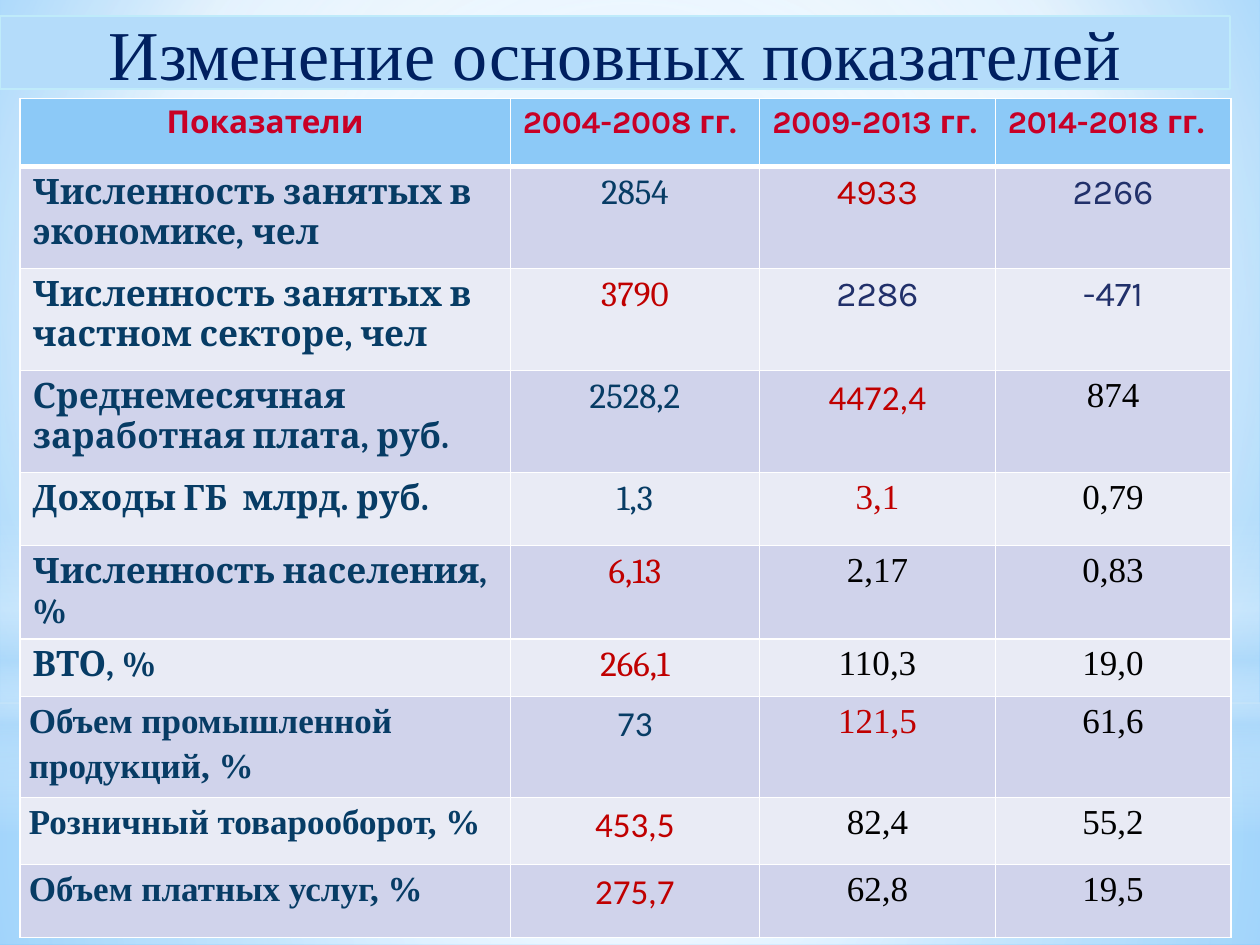
import dataclasses
import pptx
import pptx.dml.color
import pptx.enum.shapes
import pptx.enum.text
import pptx.oxml
import pptx.oxml.ns
import pptx.util

Inches = pptx.util.Inches
Pt = pptx.util.Pt
Shape = pptx.enum.shapes.MSO_SHAPE
Align = pptx.enum.text.PP_ALIGN
Anchor = pptx.enum.text.MSO_ANCHOR


@dataclasses.dataclass(frozen=True)
class Theme:
    white: str = "FFFFFF"
    sky: str = "B4DCFA"
    edge: str = "BFEBFA"
    navy: str = "002060"
    head: str = "8CC9F7"
    bands: tuple = ("D0D3EB", "E9EBF5")
    crimson: str = "C80026"
    peak: str = "C00000"
    steel: str = "073C65"
    indigo: str = "21306A"
    black: str = "000000"
    serif: str = "Times New Roman"
    book: str = "Cambria"
    sans: str = "Calibri"
    round: str = "Karla"
    title: int = 40
    label: int = 18
    body: int = 20


T = Theme()
HEAD = ("Показатели", "2004-2008 гг.", "2009-2013 гг.", "2014-2018 гг.")
DATA = (
    ("Численность занятых в экономике, чел", "2854", "4933", "2266"),
    ("Численность занятых в частном секторе, чел", "3790", "2286", "-471"),
    ("Среднемесячная заработная плата, руб.", "2528,2", "4472,4", "874"),
    ("Доходы ГБ  млрд. руб.", "1,3", "3,1", "0,79"),
    ("Численность населения, %", "6,13", "2,17", "0,83"),
    ("ВТО, %", "266,1", "110,3", "19,0"),
    ("Объем промышленной  продукций, %", "73", "121,5", "61,6"),
    ("Розничный товарооборот, %", "453,5", "82,4", "55,2"),
    ("Объем платных услуг, %", "275,7", "62,8", "19,5"),
)
WIDTHS = (3.89, 1.98, 1.87, 1.87)
HEIGHTS = (0.54, 0.81, 0.81, 0.81, 0.58, 0.46, 0.46, 0.8, 0.53, 0.58)


def color(code):
    return pptx.dml.color.RGBColor.from_string(code)


def xml(text):
    space = pptx.oxml.ns.nsdecls("a")
    return pptx.oxml.parse_xml(text.replace(" ", f" {space} ", 1))


def blend(node, stops, focus=None):
    marks = "".join(
        f'<a:gs pos="{pos * 1000}"><a:srgbClr val="{code}">'
        f'<a:alpha val="{alpha * 1000}"/></a:srgbClr></a:gs>'
        for pos, code, alpha in stops)
    way = '<a:lin ang="5400000" scaled="0"/>'
    if focus:
        sides = " ".join(f'{side}="{part * 1000}"' for side, part in zip("ltrb", focus))
        way = f'<a:path path="circle"><a:fillToRect {sides}/></a:path>'
    old = node.find(pptx.oxml.ns.qn("a:solidFill"))
    node.replace(old, xml(f'<a:gradFill rotWithShape="1"><a:gsLst>{marks}</a:gsLst>{way}</a:gradFill>'))


def style(para, font, size, tint, bold, align):
    para.alignment = align
    for run in para.runs:
        run.font.name = font
        run.font.size = Pt(size)
        run.font.bold = bold
        run.font.color.rgb = color(tint)


def backdrop(slide, left, top, width, height):
    slide.background.fill.solid()
    blend(slide.element.xpath(".//p:bgPr")[0],
          ((0, "9ED5FF", 100), (60, T.white, 100), (100, "5BB9FF", 100)), (20, 10, 20, 60))
    mid = (50, 50, 50, 50)
    layers = (
        (Shape.RECTANGLE, 5.58, 1.92, mid,
         ((0, T.white, 91), (37, T.white, 76), (100, T.sky, 79))),
        (Shape.RECTANGLE, 0, 5.58, mid,
         ((0, T.white, 89), (48, T.white, 62), (100, T.sky, 79))),
        (Shape.RECTANGLE, 4.12, 2.5, None,
         ((0, T.white, 0), (29, T.white, 30), (45, T.sky, 40),
          (55, T.white, 26), (65, T.sky, 60), (100, T.white, 0))),
        (Shape.OVAL, 1.75, 5.58, mid, ((0, T.white, 100), (56, T.white, 0))),
    )
    for kind, down, tall, focus, stops in layers:
        layer = slide.shapes.add_shape(
            kind, left, top + int(height * down / 7.5), width, int(height * tall / 7.5))
        layer.shadow.inherit = False
        layer.line.fill.background()
        layer.fill.solid()
        blend(layer.element.spPr, stops, focus)


def heading(slide, left, top, width, height):
    title = slide.shapes.title
    title.left, title.top, title.width, title.height = left, top, width, height
    title.element.spPr.append(xml('<a:prstGeom prst="roundRect"><a:avLst/></a:prstGeom>'))
    title.fill.solid()
    title.fill.fore_color.rgb = color(T.sky)
    title.line.color.rgb = color(T.edge)
    title.line.width = Pt(1.25)
    frame = title.text_frame
    frame.text = "Изменение основных показателей"
    frame.auto_size = pptx.enum.text.MSO_AUTO_SIZE.NONE
    frame.vertical_anchor = Anchor.MIDDLE
    style(frame.paragraphs[0], T.serif, T.title, T.navy, False, Align.CENTER)
    title.element.getparent().append(title.element)


def border(cell, base):
    props = cell._tc.get_or_add_tcPr()
    for spot, (side, thick) in enumerate((("L", 1), ("R", 1), ("T", 1), ("B", base))):
        props.insert(spot, xml(
            f'<a:ln{side} w="{Pt(thick)}"><a:solidFill><a:srgbClr val="{T.white}"/>'
            f'</a:solidFill></a:ln{side}>'))


def look(row, col, top):
    late = row >= 7
    if col == 0:
        return T.serif if late else T.book, T.steel
    if col == 1:
        font, tint = T.sans if late else T.book, T.steel
    elif row < 3:
        font, tint = T.round, T.indigo
    else:
        font, tint = T.sans if (row, col) == (3, 2) else T.serif, T.black
    return font, T.peak if top else tint


def grid(slide, left, top, width, height):
    table = slide.shapes.add_table(len(HEIGHTS), len(WIDTHS), left, top, width, height).table
    for col, size in zip(table.columns, WIDTHS):
        col.width = Inches(size)
    for row, size in zip(table.rows, HEIGHTS):
        row.height = Inches(size)
    for row, texts in enumerate((HEAD, *DATA)):
        sums = [float(text.replace(",", ".")) for text in texts[1:]] if row else []
        for col, text in enumerate(texts):
            cell = table.cell(row, col)
            cell.text = text
            cell.fill.solid()
            cell.fill.fore_color.rgb = color(T.bands[(row - 1) % 2] if row else T.head)
            border(cell, 1 if row else 3)
            para = cell.text_frame.paragraphs[0]
            if row == 0:
                align = Align.JUSTIFY if col else Align.CENTER
                style(para, T.round, T.label, T.crimson, True, align)
                continue
            best = col > 0 and sums[col - 1] == max(sums)
            font, tint = look(row, col, best)
            align = Align.CENTER if col else Align.LEFT
            style(para, font, T.body, tint, col == 0, align)
            if row >= 7 or (row >= 3 and col >= 2):
                para.line_spacing = 1.15
                cell.margin_left = cell.margin_right = Inches(0.07)
                cell.margin_top = cell.margin_bottom = 0


def main():
    deck = pptx.Presentation()
    deck.slide_width, deck.slide_height = Inches(10), Inches(7.5)
    slide = deck.slides.add_slide(deck.slide_layouts[5])
    backdrop(slide, 0, 0, deck.slide_width, deck.slide_height)
    grid(slide, Inches(0.16), Inches(0.78), Inches(9.61), Inches(6.41))
    heading(slide, 0, Inches(0.13), Inches(9.76), Inches(0.58))
    deck.save("out.pptx")


if __name__ == "__main__":
    main()
